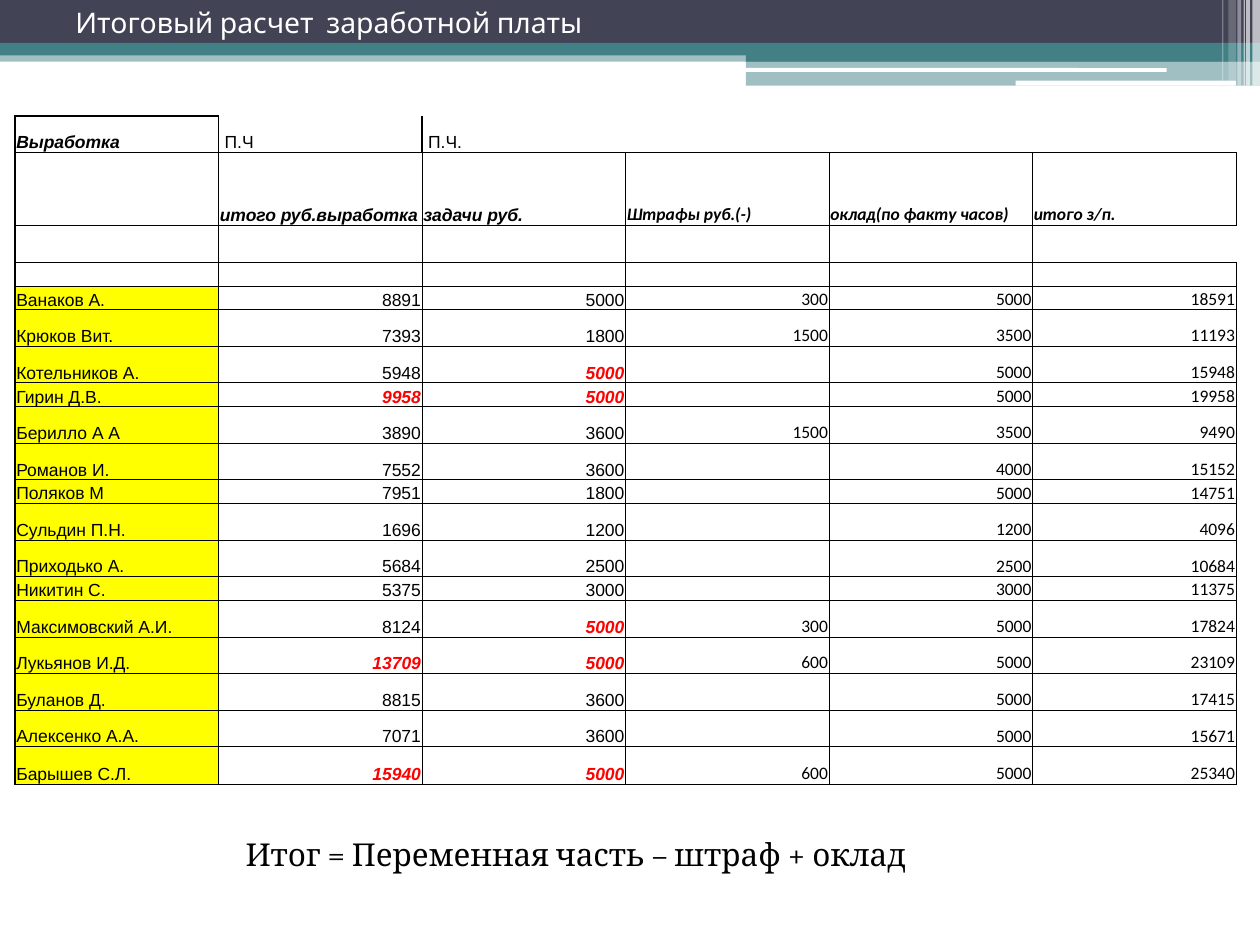
import pptx
import pptx.util
import pptx.dml.color
import pptx.enum.shapes
import pptx.enum.text
import pptx.oxml.ns
from lxml import etree

Inches, Pt = pptx.util.Inches, pptx.util.Pt
SHAPE = pptx.enum.shapes.MSO_SHAPE
ANCHOR = pptx.enum.text.MSO_ANCHOR
ALIGN = pptx.enum.text.PP_ALIGN
qn = pptx.oxml.ns.qn

COLORS = {"dark": "424456", "teal": "438086", "white": "FFFFFF",
          "black": "000000", "yellow": "FFFF00", "red": "FF0000"}
FONT_SIZE = 10
NO_GRID_STYLE = "{2D5ABB26-0587-4C30-8999-92F81FD0307C}"

# Name, output, tasks, fines, salary, highlighted columns
WORKERS = [
    ("Ванаков А.", 8891, 5000, 300, 5000, ()),
    ("Крюков Вит.", 7393, 1800, 1500, 3500, ()),
    ("Котельников А.", 5948, 5000, 0, 5000, (2,)),
    ("Гирин Д.В.", 9958, 5000, 0, 5000, (1, 2)),
    ("Берилло А А", 3890, 3600, 1500, 3500, ()),
    ("Романов И.", 7552, 3600, 0, 4000, ()),
    ("Поляков М", 7951, 1800, 0, 5000, ()),
    ("Сульдин П.Н.", 1696, 1200, 0, 1200, ()),
    ("Приходько А.", 5684, 2500, 0, 2500, ()),
    ("Никитин С.", 5375, 3000, 0, 3000, ()),
    ("Максимовский А.И.", 8124, 5000, 300, 5000, (2,)),
    ("Лукьянов И.Д.", 13709, 5000, 600, 5000, (1, 2)),
    ("Буланов Д.", 8815, 3600, 0, 5000, ()),
    ("Алексенко А.А.", 7071, 3600, 0, 5000, ()),
    ("Барышев С.Л.", 15940, 5000, 600, 5000, (1, 2)),
]
HEADER_ROWS = [
    ["Выработка", " П.Ч", " П.Ч.", "", "", ""],
    ["", "итого руб.выработка", "задачи руб.", "Штрафы руб.(-)",
     "оклад(по факту часов)", "итого з/п."],
    [""] * 6,
    [""] * 6,
]
ROW_HEIGHTS = [0.29, 0.58, 0.29, 0.19, 0.19, 0.29, 0.29, 0.19, 0.29, 0.29,
               0.19, 0.29, 0.29, 0.19, 0.29, 0.29, 0.29, 0.29, 0.3]


def rgb(name):
    return pptx.dml.color.RGBColor.from_string(COLORS[name])


def write(tf, text, size=FONT_SIZE, font="Arial", color="black",
          strong=False, align=ALIGN.LEFT):
    p = tf.paragraphs[0]
    p.alignment = align
    if not text:
        # An empty cell keeps the small size so that its row stays low
        etree.SubElement(p._p, qn("a:endParaRPr"), sz=str(size * 100))
        return
    r = p.add_run()
    r.text = text
    r.font.size = Pt(size)
    r.font.name = font
    r.font.bold = r.font.italic = strong
    r.font.color.rgb = rgb(color)


def add_text(slide, box, text, **fmt):
    tf = slide.shapes.add_textbox(*map(Inches, box)).text_frame
    tf.word_wrap = True
    tf.vertical_anchor = ANCHOR.MIDDLE
    write(tf, text, **fmt)


def add_bar(slide, box, color, alpha=100, kind=SHAPE.RECTANGLE):
    sp = slide.shapes.add_shape(kind, *map(Inches, box))
    sp.shadow.inherit = False
    sp.line.fill.background()
    sp.fill.solid()
    sp.fill.fore_color.rgb = rgb(color)
    if alpha < 100:
        clr = sp._element.spPr.find(".//" + qn("a:srgbClr"))
        etree.SubElement(clr, qn("a:alpha"), val=str(alpha * 1000))


def add_banner(slide, x, y, w):
    # Full-width bands
    add_bar(slide, (x, y + 0.4, w, 0.09), "teal", 50)
    add_bar(slide, (x, y, w, 0.34), "dark")
    add_bar(slide, (x, y + 0.34, w, 0.1), "teal")
    # Step on the right with white slots
    add_bar(slide, (x + 5.92, y + 0.39, w - 5.92, 0.1), "teal")
    add_bar(slide, (x + 5.92, y + 0.48, w - 5.92, 0.2), "teal", 50)
    add_bar(slide, (x + 5.91, y + 0.54, 3.35, 0.03), "white",
            kind=SHAPE.ROUNDED_RECTANGLE)
    add_bar(slide, (x + 8.06, y + 0.64, 1.75, 0.04), "white",
            kind=SHAPE.ROUNDED_RECTANGLE)
    # Pale vertical stripes: distance from the right edge, width, height, opacity
    for gap, width, height, alpha in [
            (0.06, 0.06, 0.68, 65), (0.11, 0.03, 0.68, 65),
            (0.13, 0.01, 0.68, 60), (0.18, 0.03, 0.68, 40),
            (0.25, 0.06, 0.64, 20), (0.3, 0.01, 0.64, 30)]:
        add_bar(slide, (x + w - gap, y, width, height), "white", alpha)
    add_text(slide, (x + 0.5, y, 9, 0.36), "Итоговый расчет  заработной платы",
             size=16.2, font="Cabin", color="white")


def border_widths(row, col):
    """Widths in points of the left, right, top and bottom borders."""
    last = len(ROW_HEIGHTS) - 1
    if col == 0:
        return {"L": 1, "R": 1, "T": 1 if row < 2 else 0.5,
                "B": 1 if row in (0, last) else 0.5}
    widths = {"L": 1 if col == 1 else 0.5, "R": 0.5, "T": 0.5, "B": 0.5}
    if row == 0:
        return {"L": 1, "B": 0.5} if col == 1 else {"B": 0.5}
    if (row, col) == (2, 5):
        del widths["R"]
    return widths


def set_borders(cell, widths):
    tc_pr = cell._tc.get_or_add_tcPr()
    for i, (side, width) in enumerate(widths.items()):
        ln = etree.Element(qn("a:ln" + side), w=str(Pt(width)))
        fill = etree.SubElement(ln, qn("a:solidFill"))
        etree.SubElement(fill, qn("a:srgbClr"), val=COLORS["black"])
        tc_pr.insert(i, ln)


def table_rows():
    """Yield the six texts of each row and its highlighted columns."""
    for texts in HEADER_ROWS:
        yield texts, ()
    for name, output, tasks, fines, salary, marked in WORKERS:
        total = output + tasks - fines + salary
        numbers = (output, tasks, fines, salary, total)
        yield [name] + [str(n) if n else "" for n in numbers], marked


def add_pay_table(slide, x, y, w):
    frame = slide.shapes.add_table(len(ROW_HEIGHTS), 6, Inches(x), Inches(y),
                                   Inches(w), Inches(sum(ROW_HEIGHTS)))
    table = frame.table
    table.first_row = table.horz_banding = False
    table._tbl.tblPr.find(qn("a:tableStyleId")).text = NO_GRID_STYLE
    for column in table.columns:
        column.width = Inches(w / 6)
    for i, (texts, marked) in enumerate(table_rows()):
        table.rows[i].height = Inches(ROW_HEIGHTS[i])
        is_worker = i >= len(HEADER_ROWS)
        for j, text in enumerate(texts):
            cell = table.cell(i, j)
            cell.vertical_anchor = ANCHOR.BOTTOM
            cell.margin_left = cell.margin_right = cell.margin_top = Inches(0.01)
            cell.margin_bottom = 0
            if is_worker and j == 0:
                cell.fill.solid()
                cell.fill.fore_color.rgb = rgb("yellow")
            else:
                cell.fill.background()
            set_borders(cell, border_widths(i, j))
            write(cell.text_frame, text,
                  font="Calibri" if j > 2 else "Arial",
                  color="red" if j in marked else "black",
                  strong=j in marked or i == 1 or (i, j) == (0, 0),
                  align=ALIGN.RIGHT if is_worker and j else ALIGN.LEFT)


def main():
    prs = pptx.Presentation()
    prs.slide_width, prs.slide_height = Inches(10), Inches(7.5)
    slide = prs.slides.add_slide(prs.slide_layouts[6])
    add_banner(slide, 0, 0, 10)
    add_pay_table(slide, 0.12, 0.92, 9.69)
    # Formula under the table
    add_text(slide, (1.85, 6.58, 5.91, 0.4),
             "Итог = Переменная часть – штраф + оклад", size=18, font="Cambria")
    prs.save("out.pptx")


if __name__ == "__main__":
    main()
